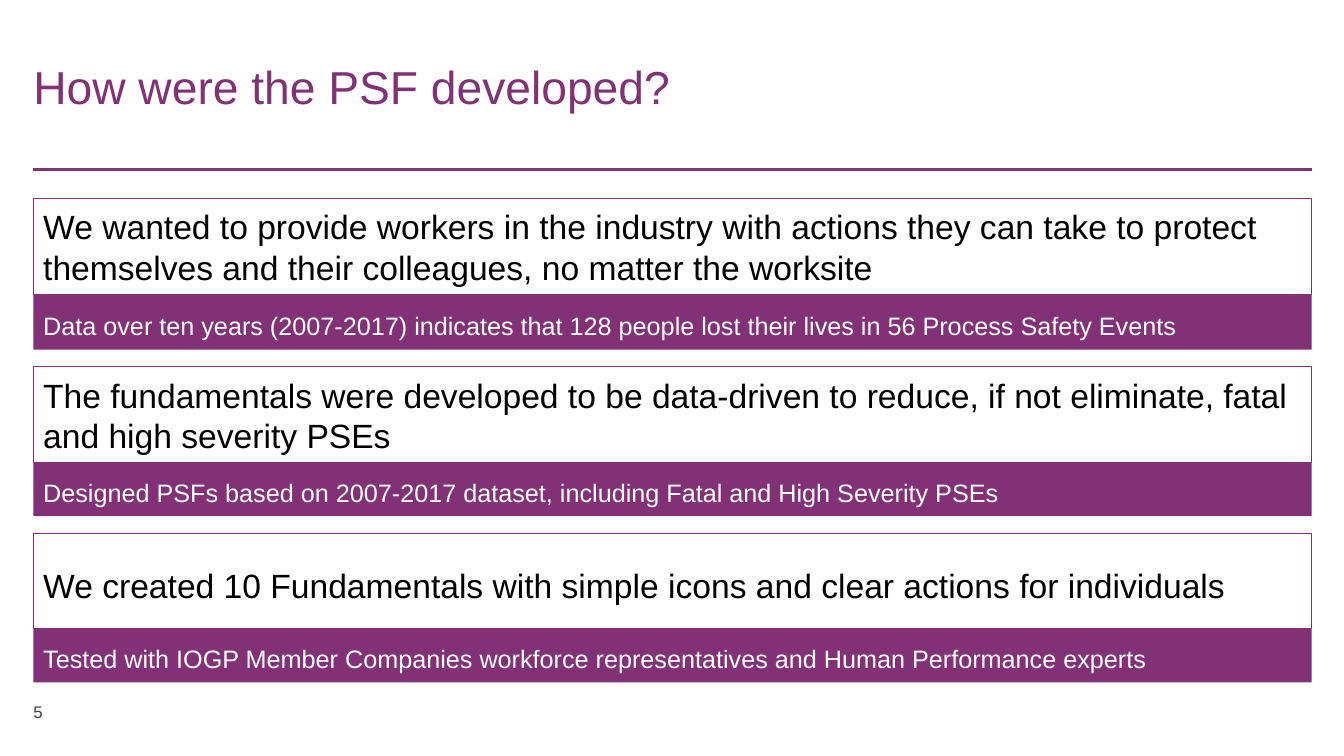
import pptx
import pptx.dml.color
import pptx.enum.shapes
import pptx.enum.text
import pptx.oxml
import pptx.util

COLORS = {"plum": "833177", "black": "000000", "white": "FFFFFF", "grey": "3E4043"}
FONT = "Arial"
SLIDE_W, SLIDE_H = 13.33, 7.5
LEFT, WIDTH = 0.33, 12.68
RULE_Y = 1.68
CARDS_TOP, CARD_GAP, STATEMENT_H = 1.97, 0.17, 0.95

# statement, its line spacing, evidence, height of the evidence band
CARDS = [
    ("We wanted to provide workers in the industry with actions they can take to protect "
     "themselves and their colleagues, no matter the worksite", 1.0,
     "Data over ten years (2007-2017) indicates that 128 people lost their lives in "
     "56 Process Safety Events", 0.55),
    ("The fundamentals were developed to be data-driven to reduce, if not eliminate, "
     "fatal and high severity PSEs", 1.0,
     "Designed PSFs based on 2007-2017 dataset, including Fatal and High Severity PSEs", 0.53),
    ("We created 10 Fundamentals with simple icons and clear actions for individuals", 1.2,
     "Tested with IOGP Member Companies workforce representatives and "
     "Human Performance experts", 0.53),
]


def rgb(name):
    return pptx.dml.color.RGBColor.from_string(COLORS[name])


def inches(*lengths):
    return [pptx.util.Inches(n) for n in lengths]


def write(sp, text, size, color, spacing=1.0):
    tf = sp.text_frame
    tf.word_wrap = True
    p = tf.paragraphs[0]
    p.alignment = pptx.enum.text.PP_ALIGN.LEFT
    p.line_spacing = spacing
    r = p.add_run()
    r.text = text
    r.font.name = FONT
    r.font.size = pptx.util.Pt(size)
    r.font.color.rgb = rgb(color)


def add_label(s, box, text, size, color, spacing=1.0):
    """Text box whose text starts flush with its left edge."""
    sp = s.shapes.add_textbox(*inches(*box))
    sp.text_frame.margin_left = 0
    write(sp, text, size, color, spacing)


def add_rule(s, x, y, width):
    line = s.shapes.add_connector(
        pptx.enum.shapes.MSO_CONNECTOR.STRAIGHT, *inches(x, y, x + width, y))
    line.line.color.rgb = rgb("plum")
    line.line.width = pptx.util.Pt(2)
    line._element.spPr.append(pptx.oxml.parse_xml(
        '<a:effectLst xmlns:a="http://schemas.openxmlformats.org/drawingml/2006/main"/>'))


def add_panel(s, box):
    sp = s.shapes.add_shape(pptx.enum.shapes.MSO_SHAPE.RECTANGLE, *inches(*box))
    sp.shadow.inherit = False
    sp.text_frame.vertical_anchor = pptx.enum.text.MSO_ANCHOR.MIDDLE
    return sp


def add_card(s, box, statement, spacing, evidence):
    """Outlined statement above a filled band that takes the rest of the box."""
    x, y, w, h = box
    top = add_panel(s, (x, y, w, STATEMENT_H))
    top.fill.background()
    top.line.color.rgb = rgb("plum")
    top.line.width = pptx.util.Pt(0.75)
    write(top, statement, 24, "black", spacing)

    band = add_panel(s, (x, y + STATEMENT_H, w, h - STATEMENT_H))
    band.fill.solid()
    band.fill.fore_color.rgb = rgb("plum")
    band.line.fill.background()
    write(band, evidence, 18, "white", 1.2)


def main():
    prs = pptx.Presentation()
    prs.slide_width, prs.slide_height = inches(SLIDE_W, SLIDE_H)
    s = prs.slides.add_slide(prs.slide_layouts[6])

    add_rule(s, LEFT, RULE_Y, WIDTH)
    add_label(s, (LEFT, 6.91, 0.71, 0.3), "5", 12, "grey")
    add_label(s, (LEFT, 0.59, 10.35, 0.99), "How were the PSF developed?", 33, "plum", 0.9)

    y = CARDS_TOP
    for statement, spacing, evidence, band_h in CARDS:
        h = STATEMENT_H + band_h
        add_card(s, (LEFT, y, WIDTH, h), statement, spacing, evidence)
        y += h + CARD_GAP

    prs.save("out.pptx")


if __name__ == "__main__":
    main()
